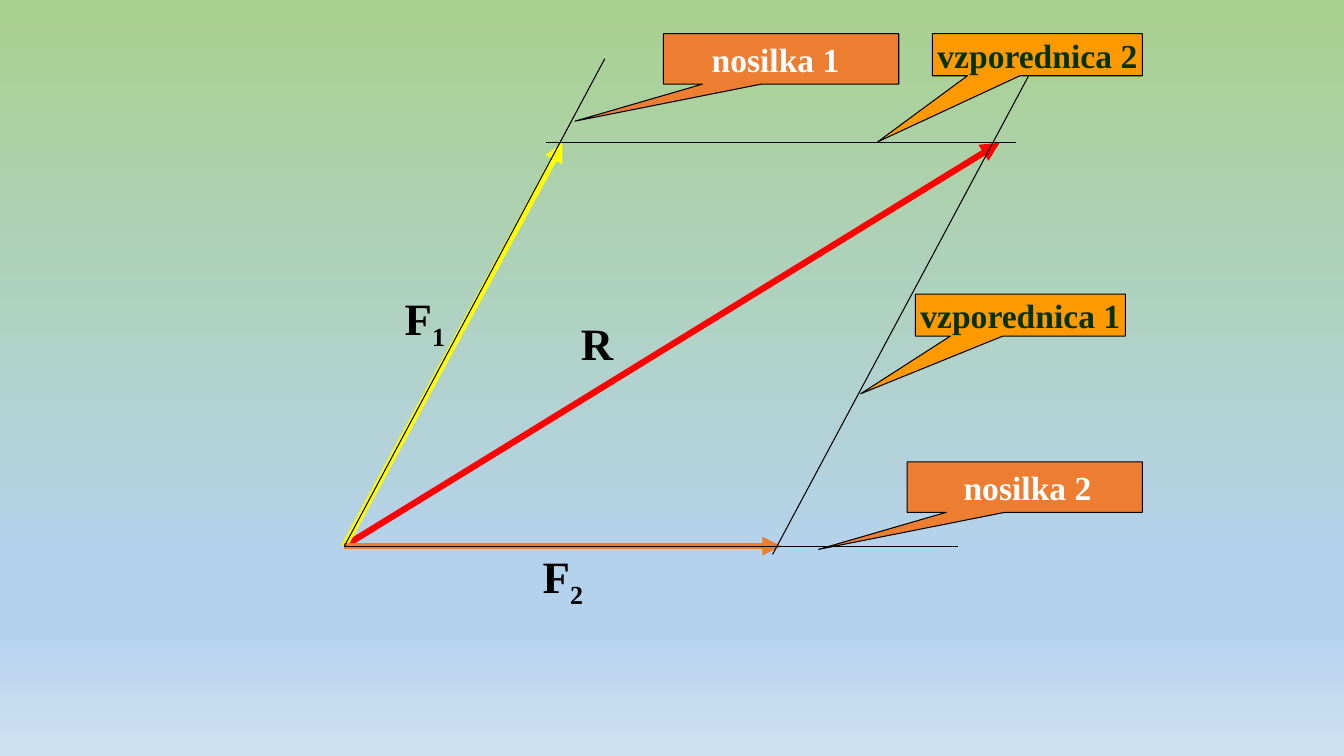
from lxml import etree
from pptx import Presentation
from pptx import util as u
from pptx.dml.color import RGBColor
from pptx.enum import shapes, text
from pptx.oxml import ns

COLORS = {
    "green": "A9D18E", "blue": "B5D2EC", "pale": "CEE1F2",
    "black": "000000", "white": "FFFFFF", "red": "FF0000",
    "yellow": "FFFF00", "orange": "ED7D31", "amber": "FF9900",
    "dark_green": "003300",
}
FONT = "Times New Roman"

# Corners of the force parallelogram, in cm
ORIGIN = (8.68, 13.76)
F1_TIP = (14.18, 3.6)
F2_TIP = (19.69, 13.76)
R_TIP = (25.19, 3.6)


def rgb(name):
    return RGBColor.from_string(COLORS[name])


def set_background(slide):
    fill = slide.background.fill
    fill.gradient()
    fill.gradient_angle = 270
    stops = slide.element.find(".//" + ns.qn("a:gsLst"))
    for stop in list(stops):
        stops.remove(stop)
    for pos, name in ((0, "green"), (74, "blue"), (83, "blue"), (100, "pale")):
        stop = etree.SubElement(stops, ns.qn("a:gs"), pos=str(pos * 1000))
        etree.SubElement(stop, ns.qn("a:srgbClr"), val=COLORS[name])


def add_line(group, start, end, color="black", width=0.75, arrow=False):
    line = group.shapes.add_connector(
        shapes.MSO_CONNECTOR.STRAIGHT, *map(u.Cm, start + end))
    line.line.color.rgb = rgb(color)
    line.line.width = u.Pt(width)
    if arrow:
        etree.SubElement(line.line._get_or_add_ln(), ns.qn("a:tailEnd"),
                         type="triangle")
    etree.SubElement(line._element.spPr, ns.qn("a:effectLst"))


def write(sp, content, size, color, sub="", centred=True, wrap=False):
    tf = sp.text_frame
    tf.word_wrap = wrap
    p = tf.paragraphs[0]
    p.alignment = text.PP_ALIGN.CENTER if centred else text.PP_ALIGN.LEFT
    for part in filter(None, (content, sub)):
        r = p.add_run()
        r.text = part
        r.font.name = FONT
        r.font.size = u.Pt(size)
        r.font.bold = True
        r.font.color.rgb = rgb(color)
    if sub:
        r.font._element.set("baseline", "-25000")
    return tf


def add_label(group, box, content, size=32, color="black", **options):
    sp = group.shapes.add_textbox(*map(u.Cm, box))
    tf = write(sp, content, size, color, **options)
    tf.auto_size = text.MSO_AUTO_SIZE.SHAPE_TO_FIT_TEXT
    return tf


def add_callout(group, box, pointer, color):
    sp = group.shapes.add_shape(
        shapes.MSO_SHAPE.RECTANGULAR_CALLOUT, *map(u.Cm, box))
    sp.shadow.inherit = False
    sp.adjustments[0], sp.adjustments[1] = pointer
    sp.fill.solid()
    sp.fill.fore_color.rgb = rgb(color)
    sp.line.color.rgb = rgb("black")
    sp.line.width = u.Pt(0.75)
    return sp


def add_force(slide, tip, color):
    group = slide.shapes.add_group_shape()
    add_line(group, ORIGIN, tip, color, 4.5, arrow=True)
    return group


def add_carrier(slide, end, left, top, label_left, content):
    group = slide.shapes.add_group_shape()
    add_line(group, ORIGIN, end)
    add_callout(group, (left, top, 5.93, 1.27), (-0.876, 1.236), "orange")
    add_label(group, (label_left, top, 3.73, 1.27), content, 24, "white")


def add_parallel(slide, start, end, left, top, reach, content):
    group = slide.shapes.add_group_shape()
    add_line(group, start, end)
    sp = add_callout(group, (left, top, 5.29, 1.06), (-0.761, reach), "amber")
    tf = write(sp, content, 24, "dark_green")
    tf.vertical_anchor = text.MSO_ANCHOR.MIDDLE


def main():
    prs = Presentation()
    prs.slide_width, prs.slide_height = u.Cm(33.87), u.Cm(19.05)
    slide = prs.slides.add_slide(prs.slide_layouts[6])
    set_background(slide)

    # Resultant and the two forces
    resultant = add_force(slide, R_TIP, "red")
    add_label(resultant, (14.39, 7.83, 2.54, 1.6), "R",
              centred=False, wrap=True)
    force_1 = add_force(slide, F1_TIP, "yellow")
    add_label(force_1, (9.95, 7.2, 2.12, 1.6), "F", sub="1",
              centred=False, wrap=True)
    force_2 = add_force(slide, F2_TIP, "orange")
    tf = add_label(force_2, (12.49, 13.76, 3.39, 1.69), "F", sub="2")
    tf.auto_size = text.MSO_AUTO_SIZE.NONE
    tf.vertical_anchor = text.MSO_ANCHOR.MIDDLE

    # Lines that carry the forces
    add_carrier(slide, (15.24, 1.48), 16.72, 0.85, 17.68, "nosilka 1")
    add_carrier(slide, (24.13, 13.76), 22.86, 11.64, 24.03, "nosilka 2")

    # Parallels that close the figure
    add_parallel(slide, (19.47, 13.97), (26.04, 1.69), 23.07, 7.41, 1.871,
                 "vzporednica 1")
    add_parallel(slide, (13.76, 3.6), (25.61, 3.6), 23.5, 0.85, 2.071,
                 "vzporednica 2")

    prs.save("out.pptx")


if __name__ == "__main__":
    main()
